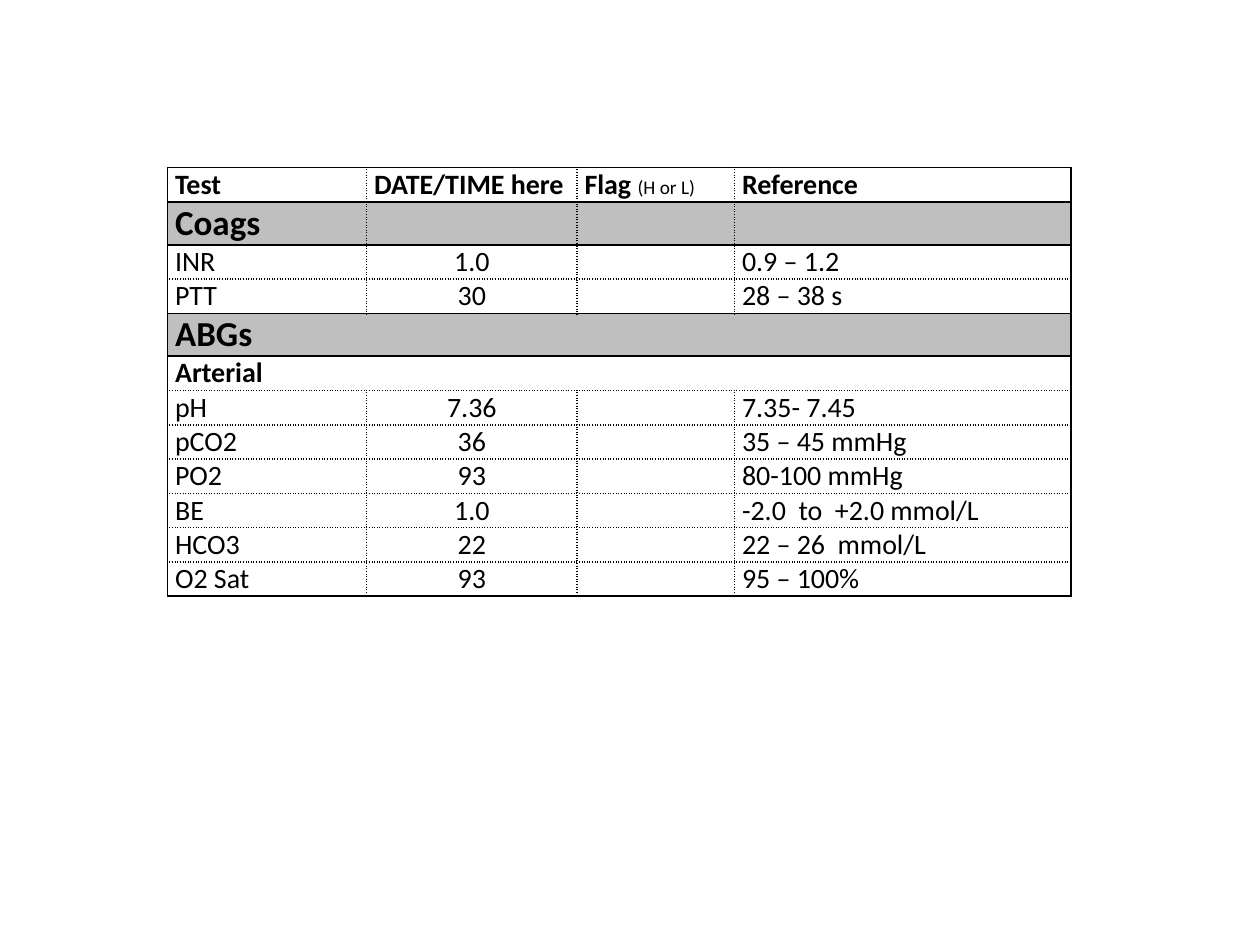
from lxml import etree
from pptx import Presentation
from pptx.dml.color import RGBColor
from pptx.enum import text
from pptx.oxml.ns import qn
from pptx.util import Inches, Pt

BLACK, WHITE, GREY = "000000", "FFFFFF", "BFBFBF"
COLUMN_WIDTHS = [1.58, 1.67, 1.25, 2.67]

# Kind of row, then the text of its cells
LAB_ROWS = [
    ("header", "Test", "DATE/TIME here", "Flag ", "Reference"),
    ("section", "Coags", "", "", ""),
    ("result", "INR", "1.0", "", "0.9 – 1.2"),
    ("result", "PTT", "30", "", "28 – 38 s"),
    ("section", "ABGs"),
    ("subsection", "Arterial"),
    ("result", "pH", "7.36", "", "7.35- 7.45"),
    ("result", "pCO2", "36", "", "35 – 45 mmHg"),
    ("result", "PO2", "93", "", "80-100 mmHg"),
    ("result", "BE", "1.0", "", "-2.0  to  +2.0 mmol/L"),
    ("result", "HCO3", "22", "", "22 – 26  mmol/L"),
    ("result", "O2 Sat", "93", "", "95 – 100%"),
]
# Row kind: height, text size, bold, fill
ROW_STYLES = {
    "header": (0.18, 16, True, WHITE),
    "section": (0.18, 20, True, GREY),
    "subsection": (0.16, 16, True, None),
    "result": (0.16, 16, False, None),
}


def color(value):
    return RGBColor.from_string(value)


def format_run(run, size, bold):
    run.font.name = "Calibri"
    run.font.size = Pt(size)
    run.font.bold = bold
    run.font.color.rgb = color(BLACK)


def write_cell(cell, wording, size, bold, centered):
    cell.margin_left = cell.margin_right = Inches(0.06)
    cell.margin_top = cell.margin_bottom = 0
    paragraph = cell.text_frame.paragraphs[0]
    if centered:
        paragraph.alignment = text.PP_ALIGN.CENTER
    if wording:
        paragraph.text = wording
        format_run(paragraph.runs[0], size, bold)
    else:
        # Keeps an empty cell from stretching its row
        etree.SubElement(paragraph._p, qn("a:endParaRPr"), sz=str(size * 100))


def set_borders(cell, **solid_sides):
    properties = cell._tc.get_or_add_tcPr()
    for side, solid in solid_sides.items():
        line = etree.SubElement(properties, qn(f"a:ln{side}"), w=str(Pt(1)))
        fill = etree.SubElement(line, qn("a:solidFill"))
        etree.SubElement(fill, qn("a:srgbClr"), val=BLACK)
        etree.SubElement(line, qn("a:prstDash"), val="solid" if solid else "dot")


def set_fill(cell, fill):
    if fill:
        cell.fill.solid()
        cell.fill.fore_color.rgb = color(fill)
    else:
        cell.fill.background()


def solid_rule_above(index):
    """Solid rules frame the table and its header and section rows."""
    if index in (0, len(LAB_ROWS)):
        return True
    neighbours = {LAB_ROWS[index - 1][0], LAB_ROWS[index][0]}
    return bool(neighbours & {"header", "section"})


def fill_row(table, index):
    kind, *wordings = LAB_ROWS[index]
    height, size, bold, fill = ROW_STYLES[kind]
    table.rows[index].height = Inches(height)
    last = len(COLUMN_WIDTHS) - 1
    spans = len(wordings) == 1
    if spans:
        table.cell(index, 0).merge(table.cell(index, last))
    for column in range(last + 1):
        cell = table.cell(index, column)
        wording = wordings[column] if column < len(wordings) else ""
        write_cell(cell, wording, size, bold, kind == "result" and column == 1)
        set_borders(cell, L=spans or column == 0, R=spans or column == last,
                    T=solid_rule_above(index), B=solid_rule_above(index + 1))
        set_fill(cell, fill)


def add_lab_table(slide):
    frame = slide.shapes.add_table(
        len(LAB_ROWS), len(COLUMN_WIDTHS),
        Inches(1.33), Inches(1.33), Inches(7.17), Inches(3.33))
    table = frame.table
    table.first_row = table.horz_banding = False
    for column, width in zip(table.columns, COLUMN_WIDTHS):
        column.width = Inches(width)
    for index in range(len(LAB_ROWS)):
        fill_row(table, index)
    frame.height = Inches(3.33)

    # Small hint beside the flag heading
    hint = table.cell(0, 2).text_frame.paragraphs[0].add_run()
    hint.text = "(H or L)"
    format_run(hint, 11, False)


def main():
    deck = Presentation()
    deck.slide_width, deck.slide_height = Inches(10), Inches(7.5)
    slide = deck.slides.add_slide(deck.slide_layouts[6])
    add_lab_table(slide)
    deck.save("out.pptx")


if __name__ == "__main__":
    main()
